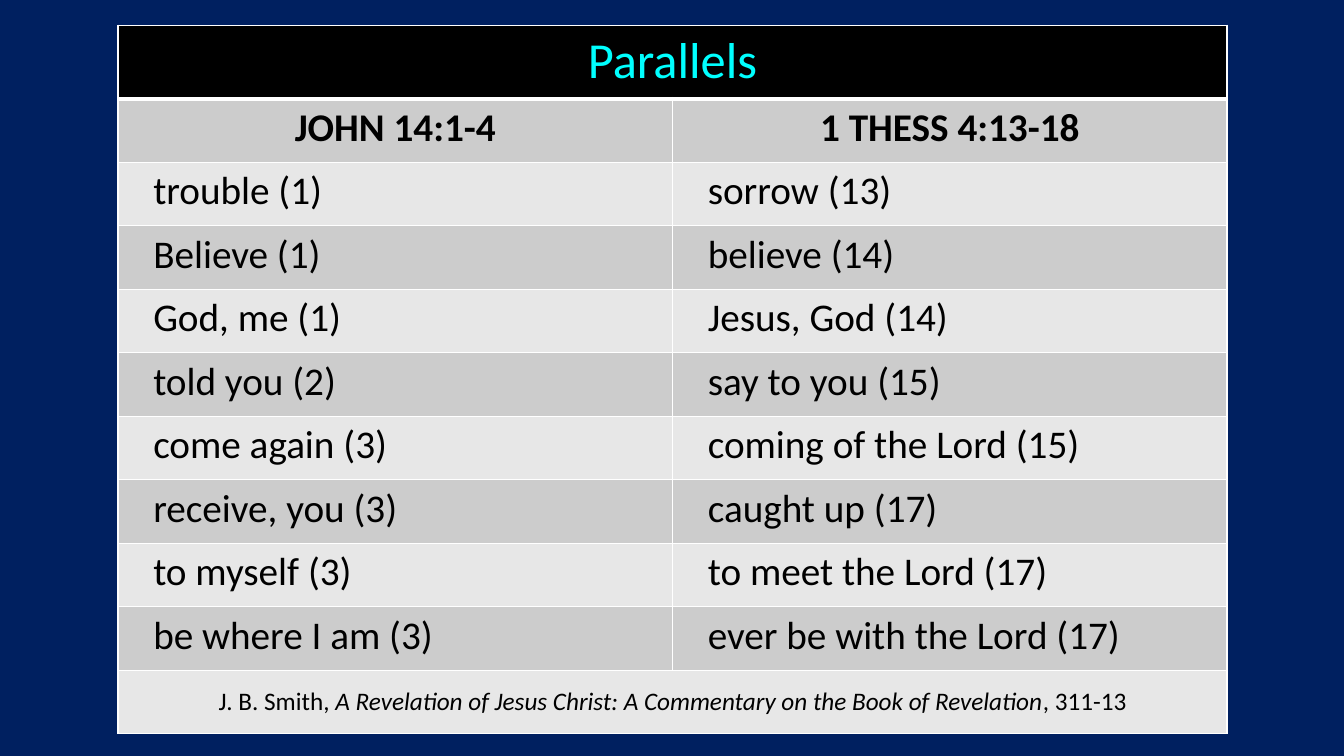
from lxml.etree import SubElement
from pptx import Presentation
from pptx.dml.color import RGBColor
from pptx.enum.text import MSO_ANCHOR as Anchor, PP_ALIGN as Align
from pptx.oxml.ns import qn
from pptx.util import Inches, Pt

NAVY, BLACK, WHITE, CYAN = "002060", "000000", "FFFFFF", "00FFFF"
BANDS = ("E7E7E7", "CCCCCC")
FONT = "Calibri"
TITLE = "Parallels"
HEADINGS = ("JOHN 14:1-4", "1 THESS 4:13-18")
PARALLELS = [
    ("trouble (1)", "sorrow (13)"),
    ("Believe (1)", "believe (14)"),
    ("God, me (1)", "Jesus, God (14)"),
    ("told you (2)", "say to you (15)"),
    ("come again (3)", "coming of the Lord (15)"),
    ("receive, you (3)", "caught up (17)"),
    ("to myself (3)", "to meet the Lord (17)"),
    ("be where I am (3)", "ever be with the Lord (17)"),
]
CITATION = [
    ("J. B. Smith, ", False),
    ("A Revelation of Jesus Christ: A Commentary on the Book of Revelation", True),
    (", 311-13", False),
]
LEFT, TOP, COLUMN = Inches(1.17), Inches(0.25), Inches(5.5)
TITLE_ROW, ROW = Inches(0.73), Inches(0.63)
INDENT = Inches(0.25)


def paint(color_format, value):
    color_format.rgb = RGBColor.from_string(value)


def fill_solid(fill, value):
    fill.solid()
    paint(fill.fore_color, value)


def add_borders(cell, top=1, bottom=1):
    properties = cell._tc.get_or_add_tcPr()
    sides = (("L", 1), ("R", 1), ("T", top), ("B", bottom))
    for position, (side, points) in enumerate(sides):
        line = SubElement(properties, qn(f"a:ln{side}"), w=str(Pt(points)))
        solid = SubElement(line, qn("a:solidFill"))
        SubElement(solid, qn("a:srgbClr"), val=WHITE)
        properties.insert(position, line)


def format_span(span, size, color, bold=False, italic=False):
    span.font.name = FONT
    span.font.size = Pt(size)
    span.font.bold = bold
    span.font.italic = italic
    paint(span.font.color, color)


def write_cell(cell, spans, size, color=BLACK, bold=False, centered=True):
    para = cell.text_frame.paragraphs[0]
    if centered:
        para.alignment = Align.CENTER
    else:
        para.level = 1
        properties = para._p.get_or_add_pPr()
        properties.set("marL", str(INDENT))
        properties.set("indent", "0")
    for text, italic in spans:
        span = para.add_run()
        span.text = text
        format_span(span, size, color, bold, italic)


def add_grid(page, row_count):
    height = TITLE_ROW + ROW * (row_count - 1)
    table = page.shapes.add_table(row_count, 2, LEFT, TOP, COLUMN * 2, height).table
    for number, row in enumerate(table.rows):
        row.height = ROW if number else TITLE_ROW
        for cell in row.cells:
            fill_solid(cell.fill, BANDS[number % 2] if number else BLACK)
            add_borders(cell, 3 if number == 1 else 1, 1 if number else 3)
    # merged
    return table


def merge_row(table, number):
    cell = table.cell(number, 0)
    cell.merge(table.cell(number, 1))
    return cell


def main():
    deck = Presentation()
    deck.slide_width, deck.slide_height = Inches(13.33), Inches(7.5)
    page = deck.slides.add_slide(deck.slide_layouts[6])
    fill_solid(page.background.fill, NAVY)

    last = len(PARALLELS) + 2
    table = add_grid(page, last + 1)
    write_cell(merge_row(table, 0), [(TITLE, False)], 36, CYAN)
    for number, texts in enumerate([HEADINGS, *PARALLELS], start=1):
        heading = number == 1
        for column, text in enumerate(texts):
            write_cell(table.cell(number, column), [(text, False)], 28,
                       bold=heading, centered=heading)
    footer = merge_row(table, last)
    footer.vertical_anchor = Anchor.MIDDLE
    write_cell(footer, CITATION, 18)

    deck.save("out.pptx")


if __name__ == "__main__":
    main()
